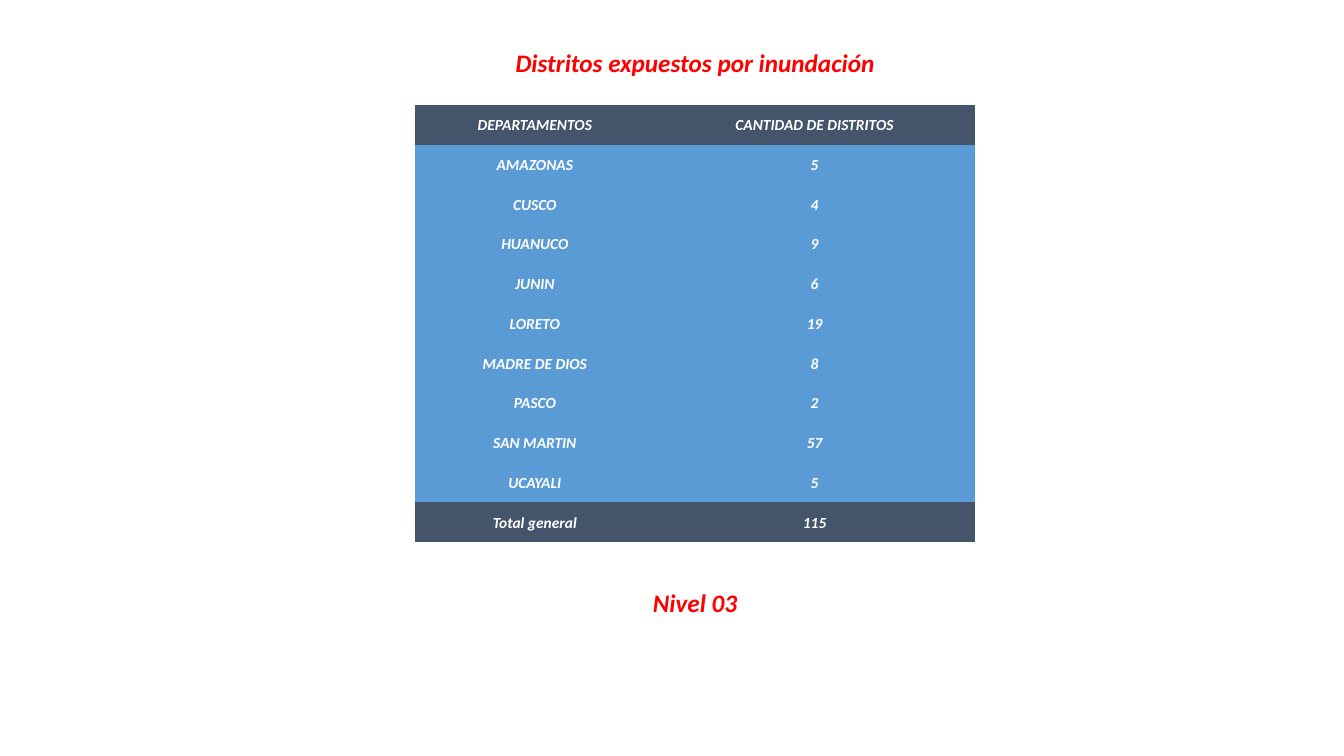
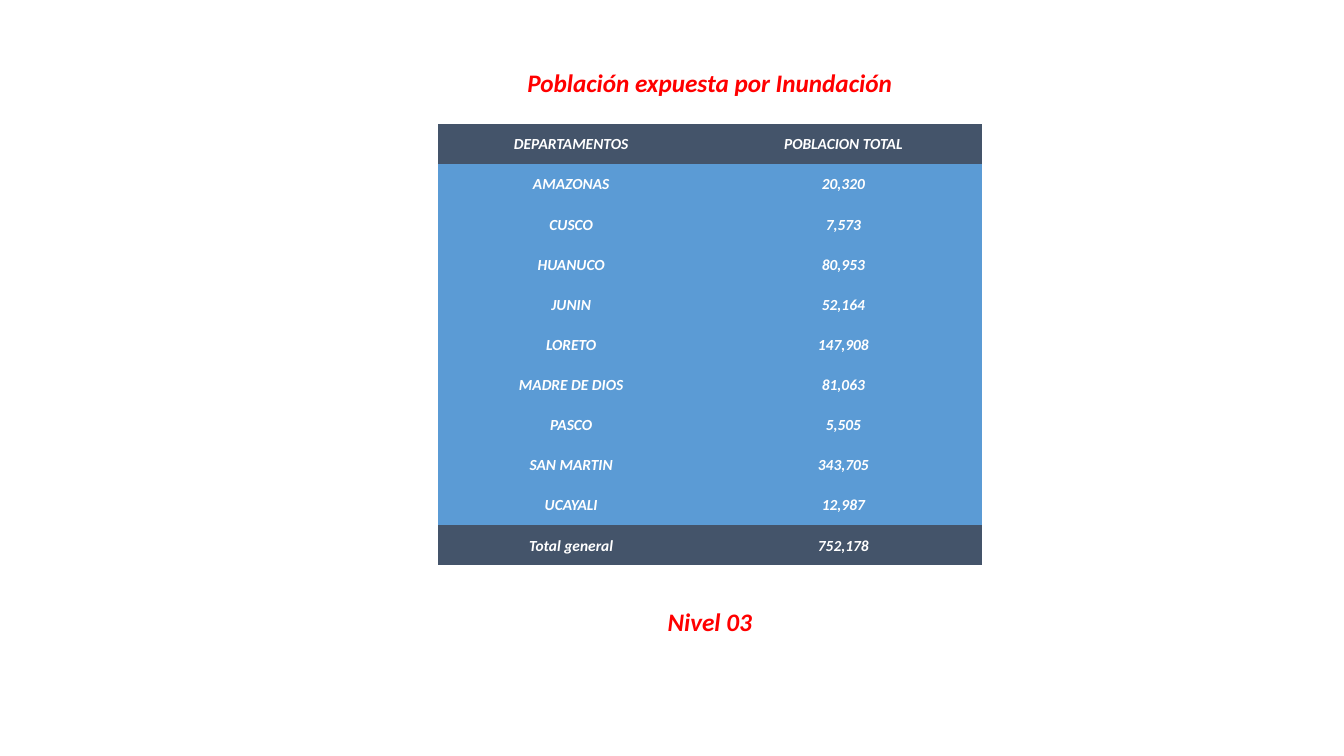
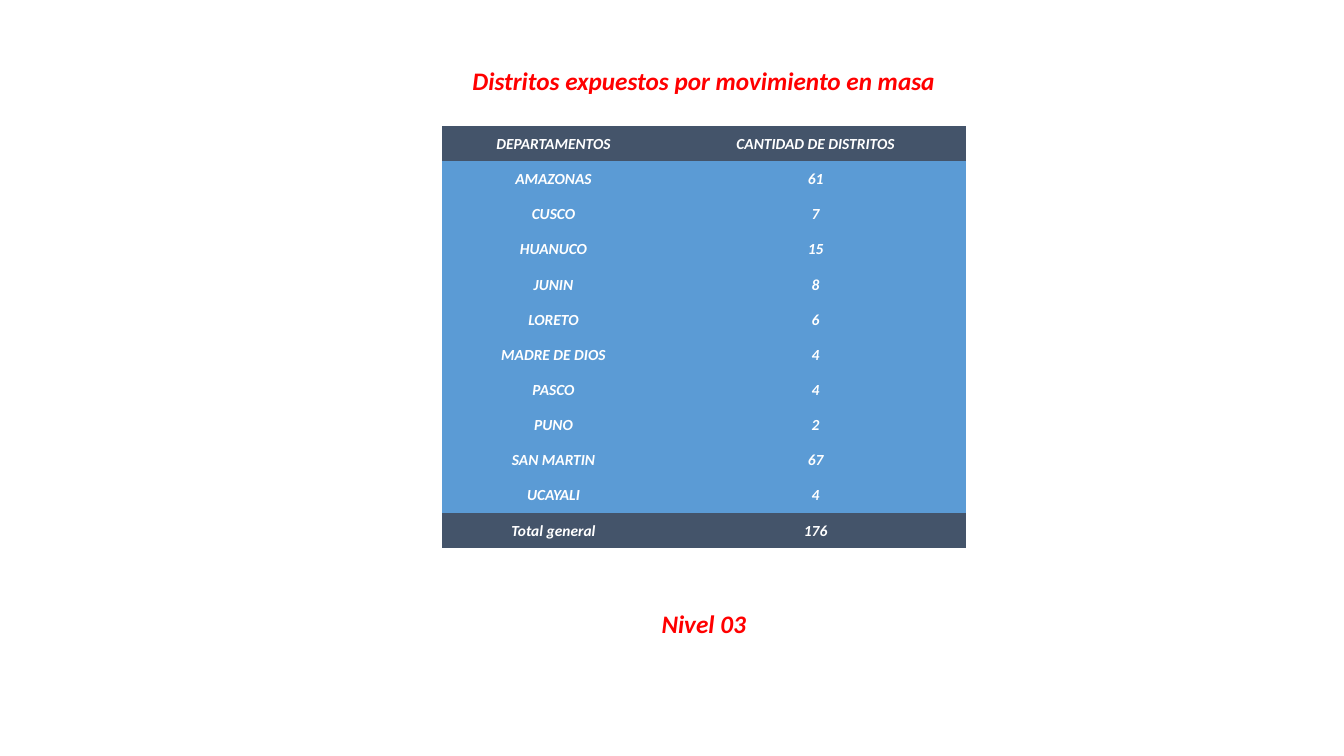
from pptx import Presentation
from pptx.dml.color import RGBColor
from pptx.enum.text import MSO_ANCHOR, MSO_AUTO_SIZE, PP_ALIGN
from pptx.oxml.ns import qn
from pptx.util import Emu, Pt

CENTER = PP_ALIGN.CENTER
MIDDLE = MSO_ANCHOR.MIDDLE
GROW = MSO_AUTO_SIZE.SHAPE_TO_FIT_TEXT

# Shared look
EMU_PER_PX = 9144  # 100 px to the inch
SLIDE_W, SLIDE_H = 1333, 750
FONT = "Calibri"
RED, WHITE, SLATE, BLUE = "FF0000", "FFFFFF", "44546A", "5B9BD5"
CAPTION_PT, CELL_PT = 18, 11
CAPTION_H = 40
CELL_INSET = 1
LEVEL = "Nivel 03"
PLAIN_TABLE = "{2D5ABB26-0587-4C30-8999-92F81FD0307C}"

# Content: table box is left, top, width, height
SECTIONS = [
    {
        "title": "Distritos expuestos por inundación",
        "title_top": 42, "title_width": 380,
        "level_top": 578, "level_width": 120,
        "table_box": (412, 104, 555, 434), "first_column": 237,
        "measure": "CANTIDAD DE DISTRITOS",
        "departments": [
            ("AMAZONAS", "5"), ("CUSCO", "4"), ("HUANUCO", "9"),
            ("JUNIN", "6"), ("LORETO", "19"), ("MADRE DE DIOS", "8"),
            ("PASCO", "2"), ("SAN MARTIN", "57"), ("UCAYALI", "5"),
        ],
        "total": "115",
    },
    {
        "title": "Población expuesta por Inundación",
        "title_top": 62, "title_width": 385,
        "level_top": 597, "level_width": 110,
        "table_box": (434, 123, 540, 438), "first_column": 265,
        "measure": "POBLACION TOTAL",
        "departments": [
            ("AMAZONAS", "20,320"), ("CUSCO", "7,573"), ("HUANUCO", "80,953"),
            ("JUNIN", "52,164"), ("LORETO", "147,908"),
            ("MADRE DE DIOS", "81,063"), ("PASCO", "5,505"),
            ("SAN MARTIN", "343,705"), ("UCAYALI", "12,987"),
        ],
        "total": "752,178",
    },
    {
        "title": "Distritos expuestos por movimiento en masa",
        "title_top": 60, "title_width": 484,
        "level_top": 599, "level_width": 107,
        "table_box": (438, 125, 520, 419), "first_column": 222,
        "measure": "CANTIDAD DE DISTRITOS",
        "departments": [
            ("AMAZONAS", "61"), ("CUSCO", "7"), ("HUANUCO", "15"),
            ("JUNIN", "8"), ("LORETO", "6"), ("MADRE DE DIOS", "4"),
            ("PASCO", "4"), ("PUNO", "2"), ("SAN MARTIN", "67"),
            ("UCAYALI", "4"),
        ],
        "total": "176",
    },
]


def px(length):
    return Emu(round(length * EMU_PER_PX))


def color(hex_string):
    return RGBColor.from_string(hex_string)


def write(text_frame, text, size, hex_string):
    """Set one centred line in the bold italic style of the slides."""
    text_frame.text = text
    line = text_frame.paragraphs[0]
    line.alignment = CENTER
    font = line.runs[0].font
    font.name, font.size = FONT, Pt(size)
    font.bold = font.italic = True
    font.color.rgb = color(hex_string)


def add_caption(slide, text, center, top, width, wrap):
    caption = slide.shapes.add_textbox(
        px(center - width / 2), px(top), px(width), px(CAPTION_H))
    frame = caption.text_frame
    frame.word_wrap = wrap
    frame.auto_size = GROW
    write(frame, text, CAPTION_PT, RED)


def fill_cell(cell, text, hex_string):
    cell.fill.solid()
    cell.fill.fore_color.rgb = color(hex_string)
    cell.vertical_anchor = MIDDLE
    cell.margin_left = cell.margin_right = cell.margin_top = px(CELL_INSET)
    cell.margin_bottom = 0
    write(cell.text_frame, text, CELL_PT, WHITE)


def add_department_table(slide, box, first_column, rows):
    left, top, width, height = box
    table = slide.shapes.add_table(
        len(rows), 2, px(left), px(top), px(width), px(height)).table
    table.first_row = table.horz_banding = False
    table._tbl.tblPr.find(qn("a:tableStyleId")).text = PLAIN_TABLE
    table.columns[0].width = px(first_column)
    table.columns[1].width = px(width - first_column)

    # Header and total rows are dark, departments are blue
    for index, values in enumerate(rows):
        table.rows[index].height = px(height / len(rows))
        row_color = SLATE if index in (0, len(rows) - 1) else BLUE
        for column, value in enumerate(values):
            fill_cell(table.cell(index, column), value, row_color)


def add_section_slide(deck, section):
    slide = deck.slides.add_slide(deck.slide_layouts[6])
    left, _, width, _ = section["table_box"]
    center = left + width / 2
    rows = [("DEPARTAMENTOS", section["measure"]),
            *section["departments"],
            ("Total general", section["total"])]

    # Title and level share the table's axis
    add_caption(slide, section["title"], center,
                section["title_top"], section["title_width"], False)
    add_caption(slide, LEVEL, center,
                section["level_top"], section["level_width"], True)
    add_department_table(slide, section["table_box"],
                         section["first_column"], rows)


def main():
    deck = Presentation()
    deck.slide_width, deck.slide_height = px(SLIDE_W), px(SLIDE_H)
    for section in SECTIONS:
        add_section_slide(deck, section)
    deck.save("out.pptx")


if __name__ == "__main__":
    main()
